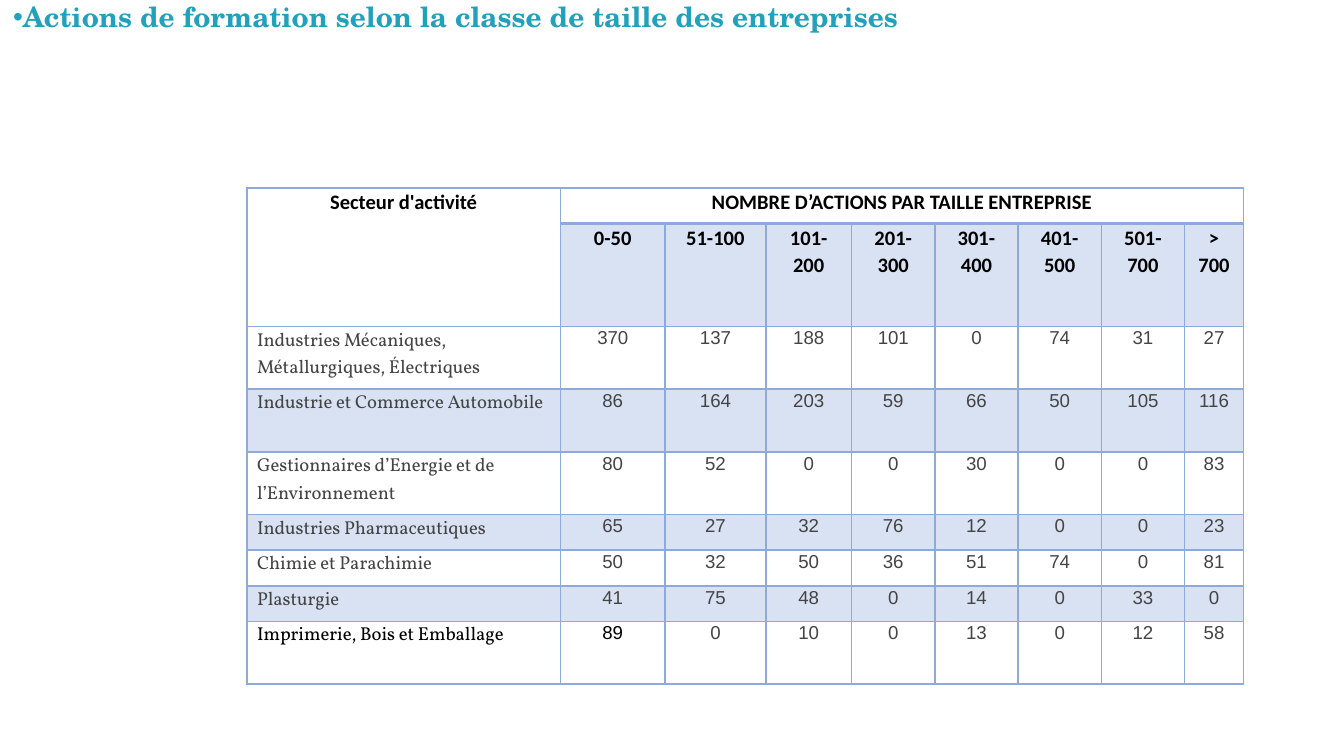
from lxml import etree
from pptx import Presentation
from pptx.dml.color import RGBColor
from pptx.enum.text import MSO_ANCHOR, PP_ALIGN
from pptx.oxml.ns import qn
from pptx.util import Pt

LEFT, CENTER, TOP = PP_ALIGN.LEFT, PP_ALIGN.CENTER, MSO_ANCHOR.TOP
BLACK = RGBColor(0x00, 0x00, 0x00)
GREY = RGBColor(0x44, 0x44, 0x44)
TEAL = RGBColor(0x21, 0xA1, 0xBC)
PALE_BLUE = RGBColor(0xD9, 0xE2, 0xF3)
BORDER_BLUE = RGBColor(0x8E, 0xAA, 0xDB)

TITLE = {"name": "TeX Gyre Schola", "size": Pt(15), "bold": True}
HEADER = {"name": "Calibri", "size": Pt(11), "bold": True}
SECTOR = {"name": "Vollkorn", "size": Pt(10), "bold": False}
NUMBER = {"name": "Arial", "size": Pt(10), "bold": False}

COL_WIDTHS = [168, 56, 54, 46, 44.6, 44.6, 44.6, 44.6, 31.6]
SINGLE, DOUBLE, HEAD = 19.1, 33.6, 55.2
ROW_HEIGHTS = [SINGLE, HEAD, DOUBLE, DOUBLE, DOUBLE, SINGLE, SINGLE, SINGLE, DOUBLE]
SIZES = ["0-50", "51-100", "101-200", "201-300", "301-400", "401-500", "501-700", "> 700"]
ROWS = [
    ["Secteur d'activité", "NOMBRE D’ACTIONS PAR TAILLE ENTREPRISE"],
    [""] + SIZES,
    ["Industries Mécaniques, Métallurgiques, Électriques", 370, 137, 188, 101, 0, 74, 31, 27],
    ["Industrie et Commerce Automobile", 86, 164, 203, 59, 66, 50, 105, 116],
    ["Gestionnaires d’Energie et de l’Environnement", 80, 52, 0, 0, 30, 0, 0, 83],
    ["Industries Pharmaceutiques", 65, 27, 32, 76, 12, 0, 0, 23],
    ["Chimie et Parachimie", 50, 32, 50, 36, 51, 74, 0, 81],
    ["Plasturgie", 41, 75, 48, 0, 14, 0, 33, 0],
    ["Imprimerie, Bois et Emballage", 89, 0, 10, 0, 13, 0, 12, 58],
]
LAST_ROW = len(ROWS) - 1


def add_run(p, text, style, color):
    r = p.add_run()
    r.text = text
    for key, value in style.items():
        setattr(r.font, key, value)
    r.font.color.rgb = color


def add_borders(cell, widths):
    """Draw the cell's edges; widths maps L, R, T and B to points."""
    tcPr = cell._tc.get_or_add_tcPr()
    for side, width in widths.items():
        ln = etree.SubElement(tcPr, qn(f"a:ln{side}"), w=str(Pt(width)))
        fill = etree.SubElement(ln, qn("a:solidFill"))
        etree.SubElement(fill, qn("a:srgbClr"), val=str(BORDER_BLUE))


prs = Presentation()
prs.slide_width, prs.slide_height = Pt(720), Pt(405)
s = prs.slides.add_slide(prs.slide_layouts[6])

# Table
table = s.shapes.add_table(
    len(ROWS), len(COL_WIDTHS), Pt(132.3), Pt(100.7),
    Pt(sum(COL_WIDTHS)), Pt(sum(ROW_HEIGHTS))).table
table.first_row = table.horz_banding = False
for col, width in zip(table.columns, COL_WIDTHS):
    col.width = Pt(width)
for row, height in zip(table.rows, ROW_HEIGHTS):
    row.height = Pt(height)
table.cell(0, 0).merge(table.cell(1, 0))
table.cell(0, 1).merge(table.cell(0, len(SIZES)))

for i, row in enumerate(ROWS):
    for j in range(len(COL_WIDTHS)):
        cell = table.cell(i, j)
        cell.margin_left = cell.margin_right = Pt(5.4)
        cell.margin_top = cell.margin_bottom = 0
        cell.vertical_anchor = TOP
        under_heading = j > 0
        add_borders(cell, {
            "L": 1, "R": 1,
            "T": 1.5 if under_heading and i == 1 else 1,
            "B": 1.5 if under_heading and i == 0 else 1})
        if i % 2 and (i > 1 or under_heading):
            cell.fill.solid()
            cell.fill.fore_color.rgb = PALE_BLUE
        else:
            cell.fill.background()
        if cell.is_spanned:
            continue
        style = HEADER if i < 2 else NUMBER if j else SECTOR
        is_black = i < 2 or (i == LAST_ROW and j < 2)
        p = cell.text_frame.paragraphs[0]
        p.alignment = LEFT if style is SECTOR else CENTER
        p.line_spacing = 1.07
        add_run(p, str(row[j]), style, BLACK if is_black else GREY)

# Title
tf = s.shapes.add_textbox(0, 0, Pt(720), Pt(36)).text_frame
tf.word_wrap = True
tf.vertical_anchor = TOP
tf.margin_top = tf.margin_bottom = 0
p = tf.paragraphs[0]
pPr = p._p.get_or_add_pPr()
etree.SubElement(pPr, qn("a:buFont"), typeface="Arial")
etree.SubElement(pPr, qn("a:buChar"), char="•")
add_run(p, "Actions de formation selon la classe de taille des entreprises", TITLE, TEAL)

prs.save("out.pptx")
